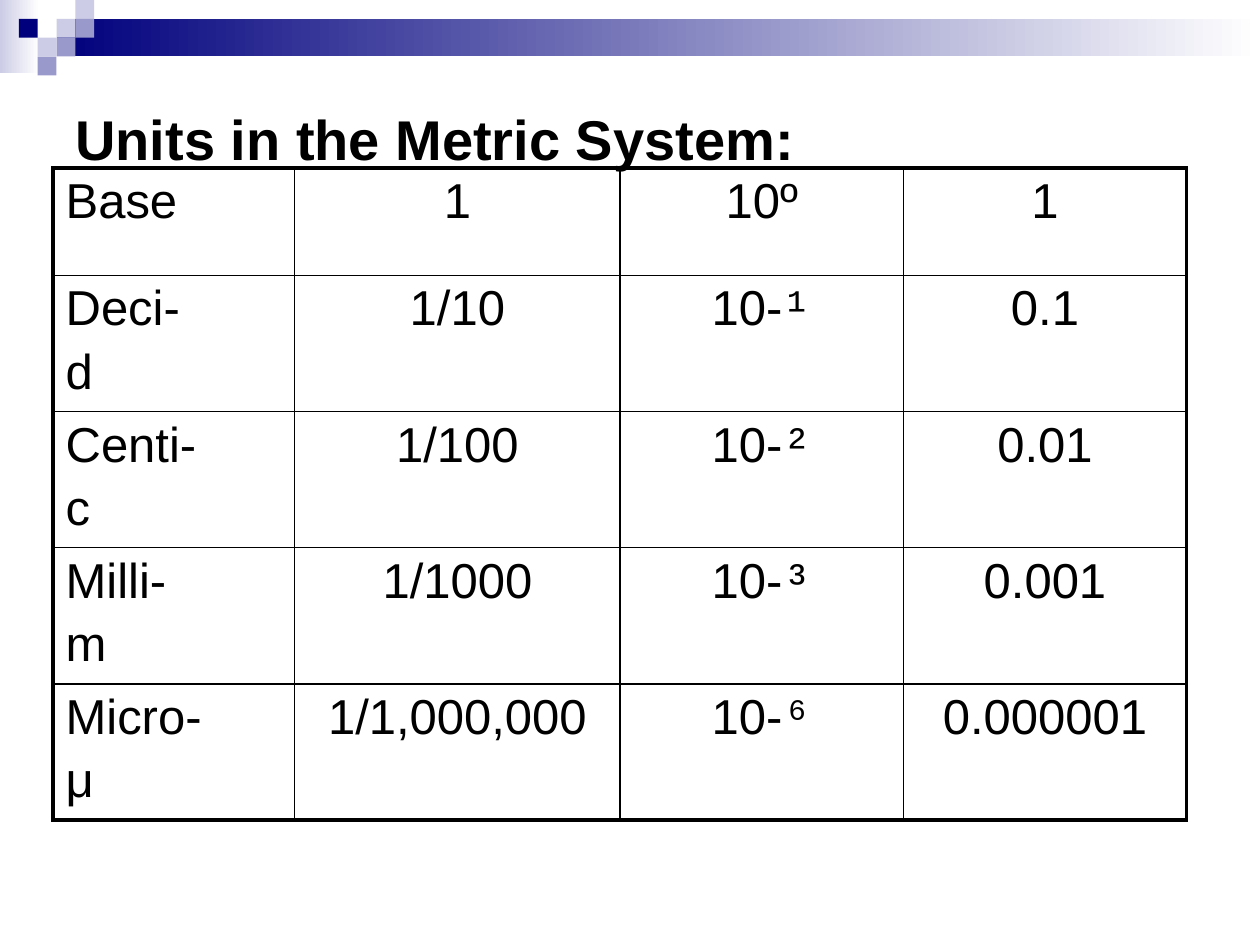
from lxml import etree
from pptx import Presentation, util as u
from pptx.dml.color import RGBColor
from pptx.enum import shapes, text
from pptx.oxml import ns

COLORS = {"navy": "00007D", "mid": "9999CC", "pale": "CCCCE6",
          "white": "FFFFFF", "black": "000000"}


def add_text(p, content, size=28, font="Arial", bold=False, align=None, before=0):
    """Append a run to paragraph p."""
    p.alignment = align
    p.space_before = u.Pt(before)
    r = p.add_run()
    r.text = content
    r.font.size, r.font.name, r.font.bold = u.Pt(size), font, bold
    r.font.color.rgb = RGBColor.from_string(COLORS["black"])


def add_rect(left, top, width, height, *colors):
    """Draw a borderless rectangle; two colours give a left-to-right gradient."""
    sp = s.shapes.add_shape(shapes.MSO_SHAPE.RECTANGLE, u.Cm(left), u.Cm(top),
                            u.Cm(width), u.Cm(height))
    sp.shadow.inherit = False
    sp.line.fill.background()
    if len(colors) == 1:
        sp.fill.solid()
        sp.fill.fore_color.rgb = RGBColor.from_string(COLORS[colors[0]])
    else:
        sp.fill.gradient()
        sp.fill.gradient_angle = 0
        for stop, color in zip(sp.fill.gradient_stops, colors):
            stop.color.rgb = RGBColor.from_string(COLORS[color])


prs = Presentation()
prs.slide_width, prs.slide_height = u.Cm(25.4), u.Cm(19.05)
s = prs.slides.add_slide(prs.slide_layouts[6])

# Header bands and checker squares (column, row on a square grid)
add_rect(0, 0, 0.79, 1.47, "pale", "white")
add_rect(1.14, 0.38, 24.26, 0.76, "navy", "white")
SQUARE = 0.38
for col, row, color in [(3, 1, "pale"), (4, 0, "pale"), (4, 1, "mid"), (2, 2, "pale"),
                        (1, 1, "navy"), (3, 2, "mid"), (2, 3, "mid")]:
    add_rect(col * SQUARE, row * SQUARE, SQUARE, SQUARE, color)

# Title
sp = s.shapes.add_textbox(u.Cm(1.27), u.Cm(1.52), u.Cm(22.86), u.Cm(2.54))
tf = sp.text_frame
tf.word_wrap = True
tf.vertical_anchor = text.MSO_ANCHOR.MIDDLE
add_text(tf.paragraphs[0], "Units in the Metric System:", size=32, bold=True)

# Table: name lines, fraction, power (base and exponent), decimal
units = [
    (["Base"], "1", ("10º", ""), "1"),
    (["Deci-", "d"], "1/10", ("10-", "¹"), "0.1"),
    (["Centi-", "c"], "1/100", ("10-", "²"), "0.01"),
    (["Milli-", "m"], "1/1000", ("10-", "³"), "0.001"),
    (["Micro-", "μ"], "1/1,000,000", ("10-", "⁶"), "0.000001"),
]
widths = [4.87, 6.56, 5.71, 5.71]
heights = [2.16] + [2.66] * 4
tbl = s.shapes.add_table(len(units), len(widths), u.Cm(1.07), u.Cm(3.39),
                         u.Cm(sum(widths)), u.Cm(sum(heights))).table
tbl.first_row = tbl.horz_banding = False
for column, width in zip(tbl.columns, widths):
    column.width = u.Cm(width)
for row, height in zip(tbl.rows, heights):
    row.height = u.Cm(height)

CENTER = text.PP_ALIGN.CENTER
for i, (names, fraction, (base, exponent), decimal) in enumerate(units):
    frames = [tbl.cell(i, j).text_frame for j in range(len(widths))]
    for n, name in enumerate(names):
        p = frames[0].add_paragraph() if n else frames[0].paragraphs[0]
        add_text(p, name, before=5 if n else 0)
    add_text(frames[1].paragraphs[0], fraction, align=CENTER)
    add_text(frames[2].paragraphs[0], base, align=CENTER)
    if exponent:
        add_text(frames[2].paragraphs[0], exponent, font="Courier New", align=CENTER)
    add_text(frames[3].paragraphs[0], decimal, align=CENTER)

    # Cell borders: thick around the table, thin inside
    for j in range(len(widths)):
        cell = tbl.cell(i, j)
        cell.fill.background()
        cell.margin_bottom = u.Cm(0.07)
        outer = {"lnL": j == 0, "lnR": j == len(widths) - 1,
                 "lnT": i == 0, "lnB": i == len(units) - 1}
        tcPr = cell._tc.get_or_add_tcPr()
        for k, (side, thick) in enumerate(outer.items()):
            ln = etree.Element(ns.qn("a:" + side), w=str(u.Pt(2.25 if thick else 1)))
            fill = etree.SubElement(ln, ns.qn("a:solidFill"))
            etree.SubElement(fill, ns.qn("a:srgbClr"), val=COLORS["black"])
            tcPr.insert(k, ln)

prs.save("out.pptx")
